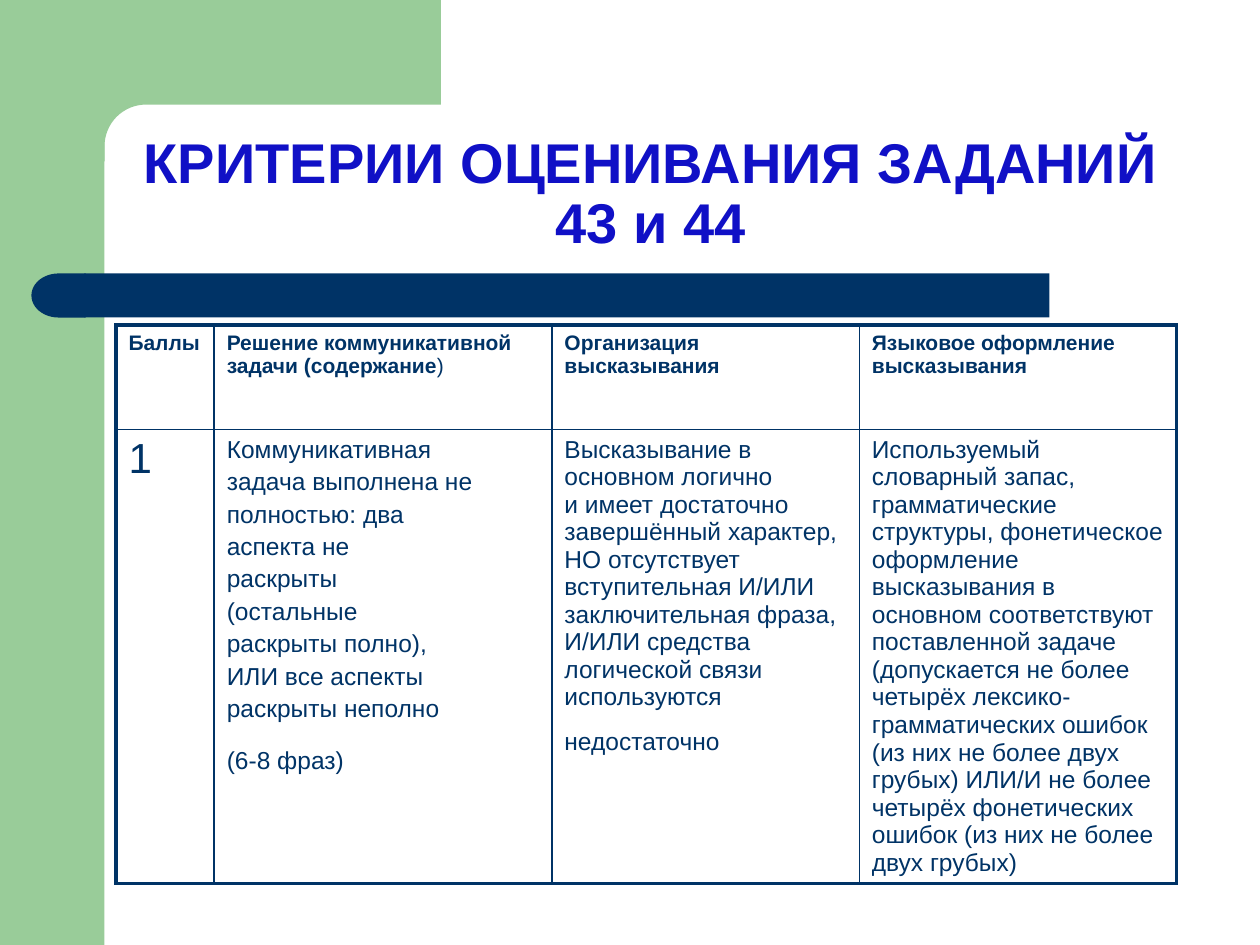
from copy import deepcopy
from math import cos, pi, sin

from lxml.etree import SubElement
from pptx import Presentation
from pptx.dml.color import RGBColor
from pptx.enum.shapes import MSO_SHAPE
from pptx.enum.text import MSO_ANCHOR, PP_ALIGN
from pptx.oxml.ns import qn
from pptx.util import Inches, Pt

GREEN, NAVY, BLUE = "99CC99", "003366", "1010C6"
COLUMN_WIDTHS = [0.78, 2.68, 2.44, 2.52]
ROW_HEIGHTS = [0.83, 3.6]
HEADINGS = [
    "Баллы",
    "Решение коммуникативной задачи (содержание",
    "Организация высказывания",
    "Языковое оформление высказывания",
]
CONTENT_CRITERIA = [
    "Коммуникативная",
    "задача выполнена не",
    "полностью: два",
    "аспекта не",
    "раскрыты",
    "(остальные",
    "раскрыты полно),",
    "ИЛИ все аспекты",
    "раскрыты неполно",
    "(6-8 фраз)",
]
ORGANISATION_CRITERIA = [
    "Высказывание в основном логично \vи имеет достаточно завершённый характер, "
    "НО отсутствует вступительная И/ИЛИ заключительная фраза, И/ИЛИ средства "
    "логической связи используются",
    "недостаточно",
]
LANGUAGE_CRITERIA = [
    "Используемый словарный запас, грамматические структуры, фонетическое "
    "оформление высказывания в основном соответствуют поставленной задаче "
    "(допускается не более четырёх лексико-грамматических ошибок (из них не "
    "более двух грубых) ИЛИ/И не более четырёх фонетических ошибок (из них "
    "не более двух грубых)"
]


def color(value):
    return RGBColor.from_string(value)


def write_text(frame, paragraphs, size=14, bold=False, fill=NAVY,
               align=PP_ALIGN.LEFT, spacing=1.0, gap=2.8, last_gap=None, plain_tail=""):
    frame.word_wrap = True
    for index, words in enumerate(paragraphs):
        paragraph = frame.add_paragraph() if index else frame.paragraphs[0]
        paragraph.text = words
        paragraph.alignment = align
        paragraph.line_spacing = spacing
        paragraph.space_before = Pt(gap if index else 0)
        if plain_tail:
            paragraph.add_run().text = plain_tail
        for run in paragraph.runs:
            run.font.name = "Arial"
            run.font.size = Pt(size)
            run.font.bold = bold and run.text != plain_tail
            run.font.color.rgb = color(fill)
        for line_break in paragraph._p.findall(qn("a:br")):
            line_break.insert(0, deepcopy(paragraph.runs[0]._r.rPr))
    if last_gap is not None:
        frame.paragraphs[-1].space_before = Pt(last_gap)


def paint(shape, fill):
    shape.shadow.inherit = False
    shape.fill.solid()
    shape.fill.fore_color.rgb = color(fill)
    shape.line.fill.background()


def add_block(slide, kind, left, top, width, height, fill):
    block = slide.shapes.add_shape(
        kind, Inches(left), Inches(top), Inches(width), Inches(height))
    paint(block, fill)
    return block


def add_green_corner(slide, side_width, top_width, top_height, radius, page_height):
    add_block(slide, MSO_SHAPE.RECTANGLE, 0, 0, side_width, page_height, GREEN)
    steps = 16
    center_x, center_y = side_width + radius, top_height + radius
    angles = [pi / 2 * step / steps for step in range(steps + 1)]
    curve = [(center_x - radius * sin(a), center_y - radius * cos(a)) for a in angles]
    inner_left = 0.5
    outline = [(top_width, top_height), *curve, (side_width, 1.28),
               (inner_left, 1.28), (inner_left, 0)]
    builder = slide.shapes.build_freeform(Inches(top_width), 0)
    builder.add_line_segments([(Inches(x), Inches(y)) for x, y in outline], close=True)
    paint(builder.convert_to_shape(), GREEN)


def add_divider(slide, left, top, width, height):
    cap_width = 0.43
    add_block(slide, MSO_SHAPE.RECTANGLE, left + cap_width - 0.01, top,
              width - cap_width + 0.01, height, NAVY)
    cap = add_block(slide, MSO_SHAPE.FLOWCHART_DELAY, left, top, cap_width, height, NAVY)
    cap._element.spPr.get_or_add_xfrm().set("flipH", "1")


def add_title(slide, left, top, width, height):
    title = slide.shapes.title
    title.left, title.top = Inches(left), Inches(top)
    title.width, title.height = Inches(width), Inches(height)
    title.text_frame.vertical_anchor = MSO_ANCHOR.BOTTOM
    write_text(title.text_frame, ["КРИТЕРИИ ОЦЕНИВАНИЯ ЗАДАНИЙ 43 и 44"],
               size=32, bold=True, fill=BLUE, align=PP_ALIGN.CENTER, spacing=0.9)


def set_borders(cell, outer_sides):
    properties = cell._tc.get_or_add_tcPr()
    for side in "LRTB":
        width = Pt(2.25 if side in outer_sides else 1)
        line = SubElement(properties, qn(f"a:ln{side}"), w=str(width))
        SubElement(SubElement(line, qn("a:solidFill")), qn("a:srgbClr"), val=NAVY)


def add_criteria_table(slide, left, top):
    rows, columns = len(ROW_HEIGHTS), len(COLUMN_WIDTHS)
    table = slide.shapes.add_table(
        rows, columns, Inches(left), Inches(top),
        Inches(sum(COLUMN_WIDTHS)), Inches(sum(ROW_HEIGHTS))).table
    table.first_row = table.horz_banding = False
    for column, width in zip(table.columns, COLUMN_WIDTHS):
        column.width = Inches(width)
    for row, height in zip(table.rows, ROW_HEIGHTS):
        row.height = Inches(height)
    for r in range(rows):
        for c in range(columns):
            edges = {"L": c == 0, "R": c == columns - 1, "T": r == 0, "B": r == rows - 1}
            cell = table.cell(r, c)
            set_borders(cell, [side for side, outer in edges.items() if outer])
            cell.fill.background()
    for c, heading in enumerate(HEADINGS):
        write_text(table.cell(0, c).text_frame, [heading], size=12, bold=True,
                   plain_tail=")" if c == 1 else "")
    write_text(table.cell(1, 0).text_frame, ["1"], size=24)
    write_text(table.cell(1, 1).text_frame, CONTENT_CRITERIA, last_gap=14)
    write_text(table.cell(1, 2).text_frame, ORGANISATION_CRITERIA, last_gap=9.5)
    write_text(table.cell(1, 3).text_frame, LANGUAGE_CRITERIA)


def main():
    deck = Presentation()
    deck.slide_width, deck.slide_height = Inches(10), Inches(7.5)
    slide = deck.slides.add_slide(deck.slide_layouts[5])
    add_green_corner(slide, side_width=0.83, top_width=3.5, top_height=0.83,
                     radius=0.33, page_height=7.5)
    add_divider(slide, 0.25, 2.17, 8.08, 0.35)
    add_title(slide, 0.83, 0.83, 8.67, 1.25)
    add_criteria_table(slide, 0.92, 2.58)
    deck.save("out.pptx")


if __name__ == "__main__":
    main()
